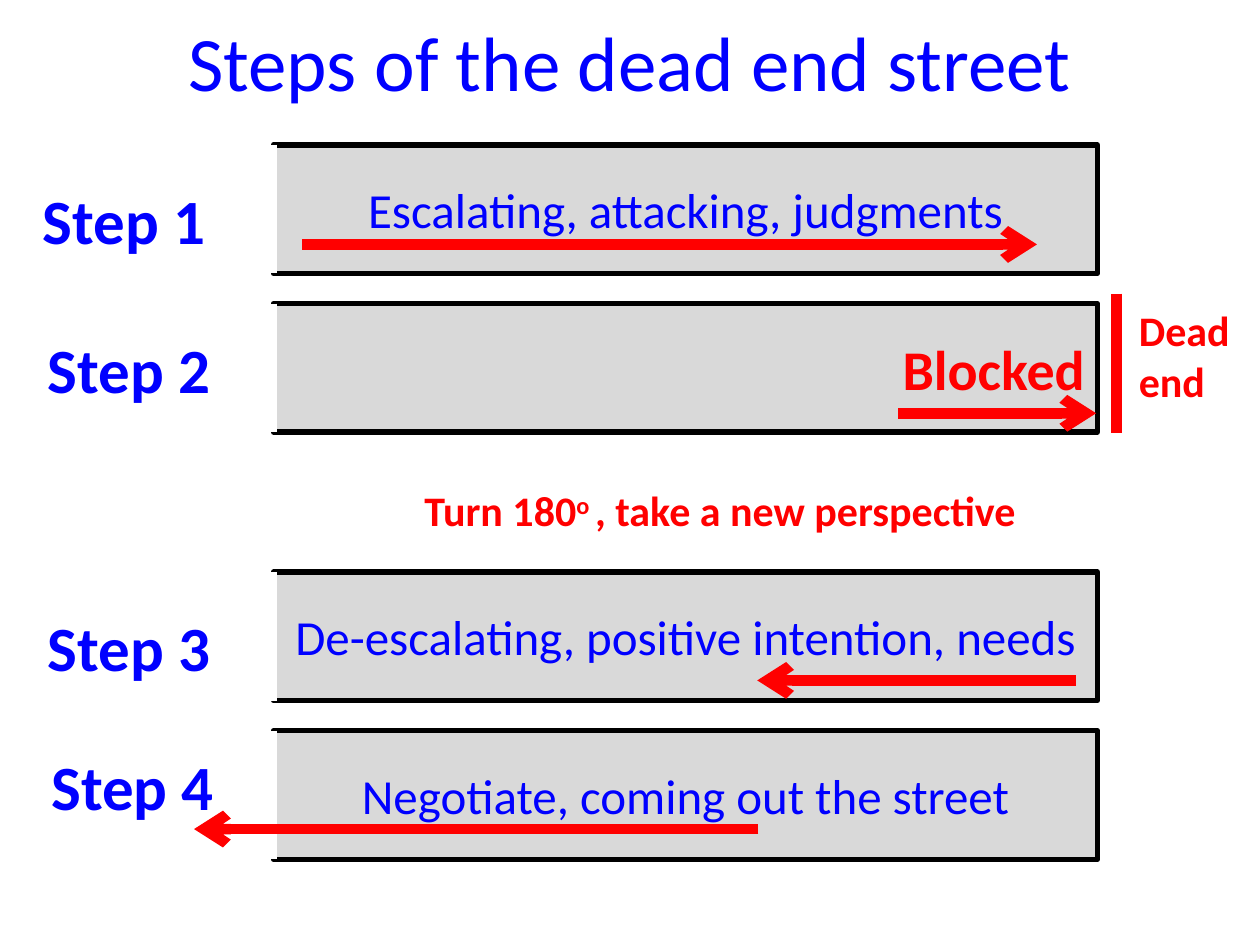
import pptx
import pptx.util
import pptx.dml.color
import pptx.enum.shapes
import pptx.enum.text
import pptx.oxml.xmlchemy

Inches = pptx.util.Inches
Pt = pptx.util.Pt
RGBColor = pptx.dml.color.RGBColor
ALIGN = pptx.enum.text.PP_ALIGN
MIDDLE = pptx.enum.text.MSO_ANCHOR.MIDDLE
BLUE = RGBColor(0, 0, 255)
RED = RGBColor(255, 0, 0)
GRAY = RGBColor(217, 217, 217)
BLACK = RGBColor(0, 0, 0)
WHITE = RGBColor(255, 255, 255)


def add_run(para, text, size, color, bold=False):
    run = para.add_run()
    run.text = text
    run.font.name = "Calibri"
    run.font.size = Pt(size)
    run.font.bold = bold
    run.font.color.rgb = color
    return run


def add_line(shapes, x1, y1, x2, y2, color, width, arrow=False):
    line = shapes.add_connector(
        pptx.enum.shapes.MSO_CONNECTOR.STRAIGHT,
        Inches(x1), Inches(y1), Inches(x2), Inches(y2))
    line.line.color.rgb = color
    line.line.width = Pt(width)
    if arrow:
        tail = pptx.oxml.xmlchemy.OxmlElement("a:tailEnd")
        tail.set("type", "arrow")
        line.line._get_or_add_ln().append(tail)
    line._element.spPr.append(pptx.oxml.xmlchemy.OxmlElement("a:effectLst"))


deck = pptx.Presentation()
deck.slide_width = Inches(10)
deck.slide_height = Inches(7.5)
slide = deck.slides.add_slide(deck.slide_layouts[5])
shapes = slide.shapes

title = shapes.title
title.left, title.top = Inches(0.5), Inches(-0.03)
title.width, title.height = Inches(9), Inches(1.02)
title.text_frame.vertical_anchor = MIDDLE
para = title.text_frame.paragraphs[0]
para.alignment = ALIGN.CENTER
add_run(para, "Steps of the dead end street", 44, BLUE)

left, wide, high = 2.17, 6.54, 1.02
streets = [
    (1.15, "Escalating, attacking, judgments", 28, BLUE, False, ALIGN.CENTER),
    (2.41, "Blocked", 32, RED, True, ALIGN.RIGHT),
    (4.54, "De-escalating, positive intention, needs", 28, BLUE, False,
     ALIGN.CENTER),
    (5.8, "Negotiate, coming out the street", 28, BLUE, False, ALIGN.CENTER),
]
for top, text, size, color, bold, align in streets:
    group = shapes.add_group_shape()
    street = group.shapes.add_shape(
        pptx.enum.shapes.MSO_SHAPE.RECTANGLE,
        Inches(left), Inches(top), Inches(wide), Inches(high))
    street.shadow.inherit = False
    street.fill.solid()
    street.fill.fore_color.rgb = GRAY
    street.line.color.rgb = BLACK
    street.line.width = Pt(3)
    street.text_frame.word_wrap = True
    street.text_frame.vertical_anchor = MIDDLE
    para = street.text_frame.paragraphs[0]
    para.alignment = align
    add_run(para, text, size, color, bold)
    add_line(group.shapes, left, top, left, top + high, WHITE, 4.5)

moves = [
    (2.4, 1.94, 8.23, 1.94, True),
    (8.86, 2.33, 8.86, 3.44, False),
    (7.13, 3.28, 8.7, 3.28, True),
    (8.54, 5.4, 6.01, 5.4, True),
    (6.02, 6.58, 1.54, 6.58, True),
]
for x1, y1, x2, y2, arrow in moves:
    add_line(shapes, x1, y1, x2, y2, RED, 6, arrow)

labels = [
    (8.94, 2.37, 1.06, 0.91, ["Dead", "end"], 24, RED),
    (3.27, 3.8, 5.35, 0.5, ["Turn 180"], 24, RED),
    (0.24, 1.39, 1.54, 0.71, ["Step 1"], 36, BLUE),
    (0.28, 2.57, 1.54, 0.71, ["Step 2"], 36, BLUE),
    (0.28, 4.78, 1.54, 0.71, ["Step 3"], 36, BLUE),
    (0.31, 5.88, 1.54, 0.71, ["Step 4"], 36, BLUE),
]
for x, y, w, h, lines, size, color in labels:
    box = shapes.add_textbox(Inches(x), Inches(y), Inches(w), Inches(h))
    box.text_frame.word_wrap = True
    box.text_frame.auto_size = pptx.enum.text.MSO_AUTO_SIZE.SHAPE_TO_FIT_TEXT
    para = box.text_frame.paragraphs[0]
    for i, text in enumerate(lines):
        if i:
            para.add_line_break()
        add_run(para, text, size, color, True)
    if lines == ["Turn 180"]:
        degree = add_run(para, "o ", size, color, True)
        degree._r.get_or_add_rPr().set("baseline", "30000")
        add_run(para, ", take a new perspective", size, color, True)

deck.save("out.pptx")
